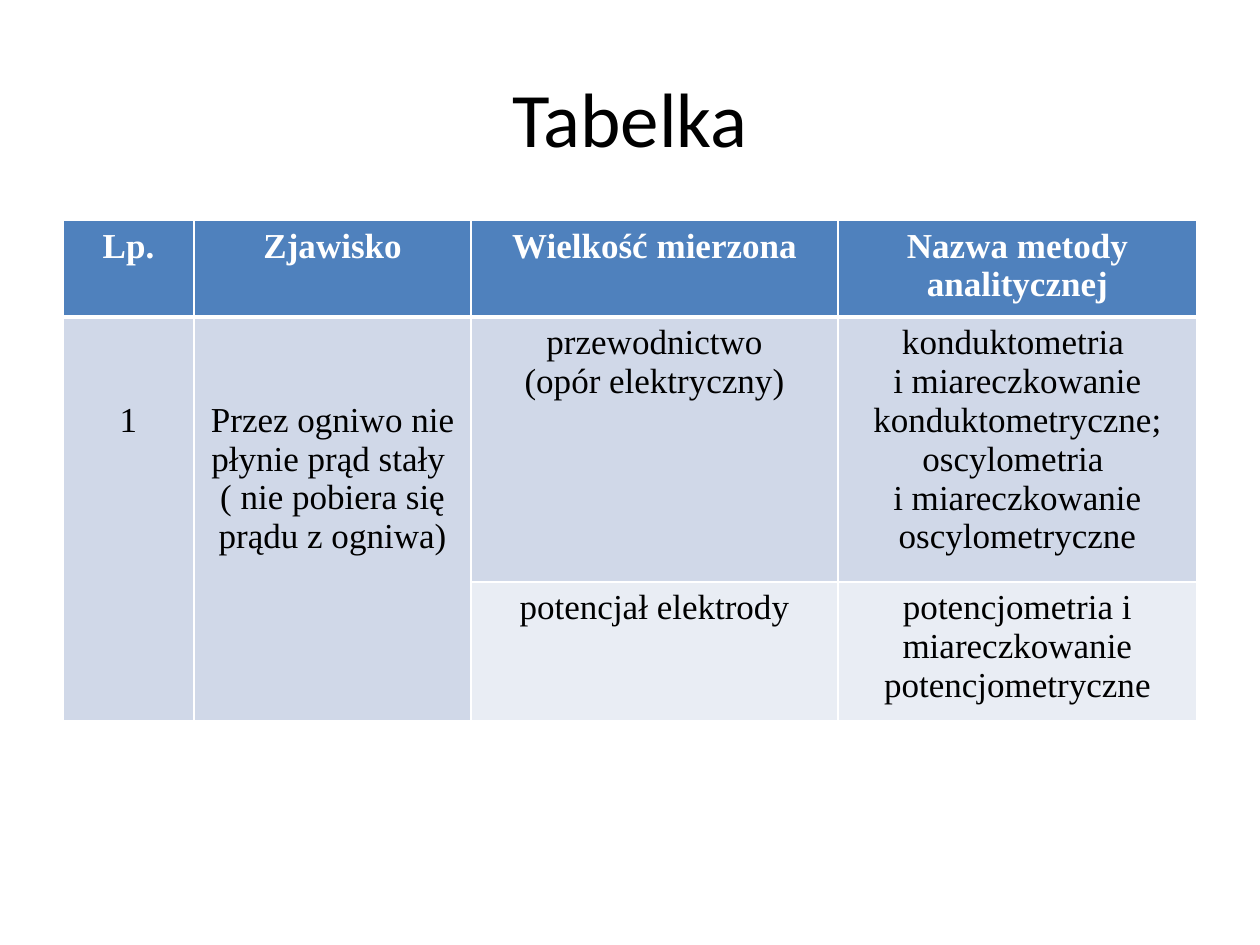
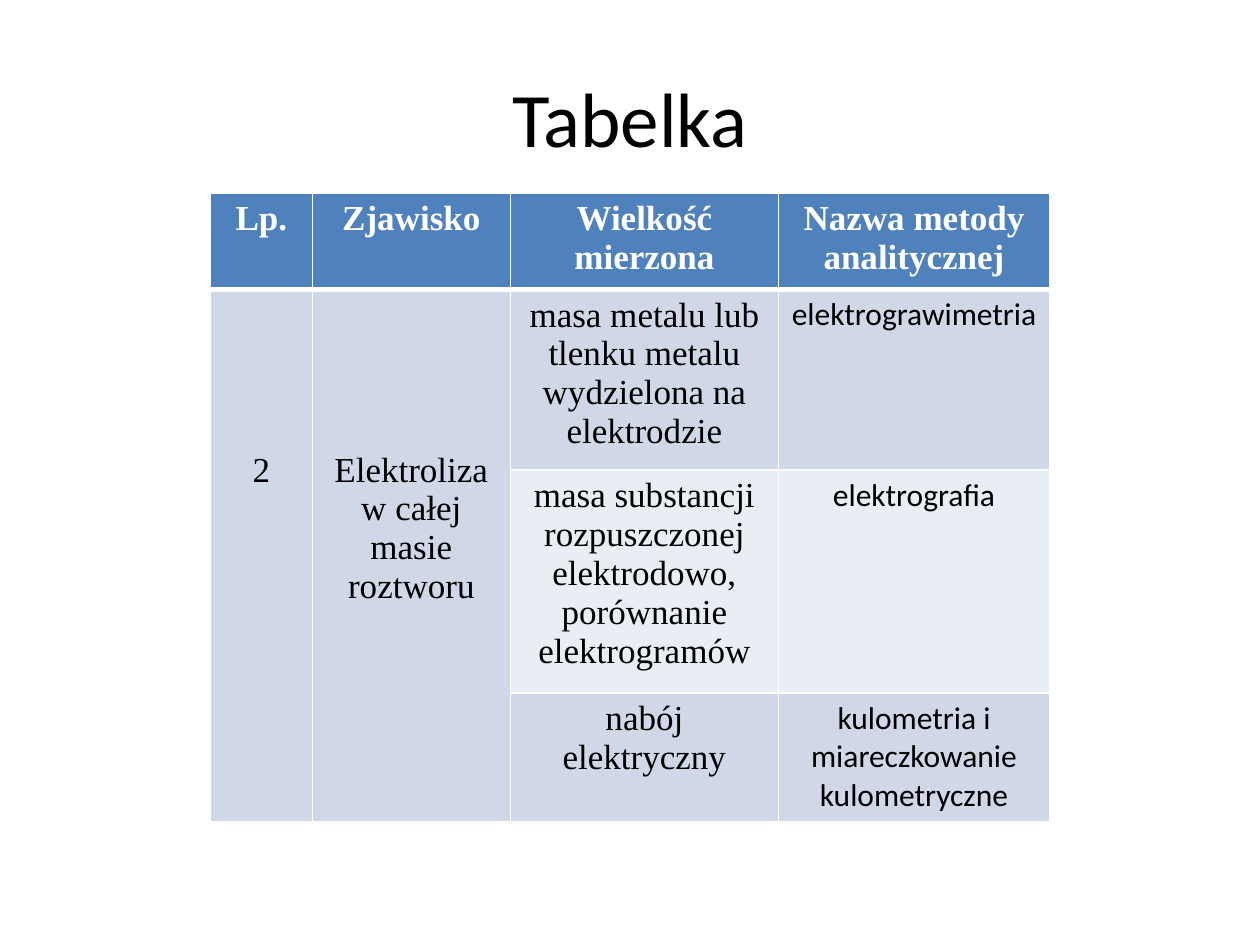
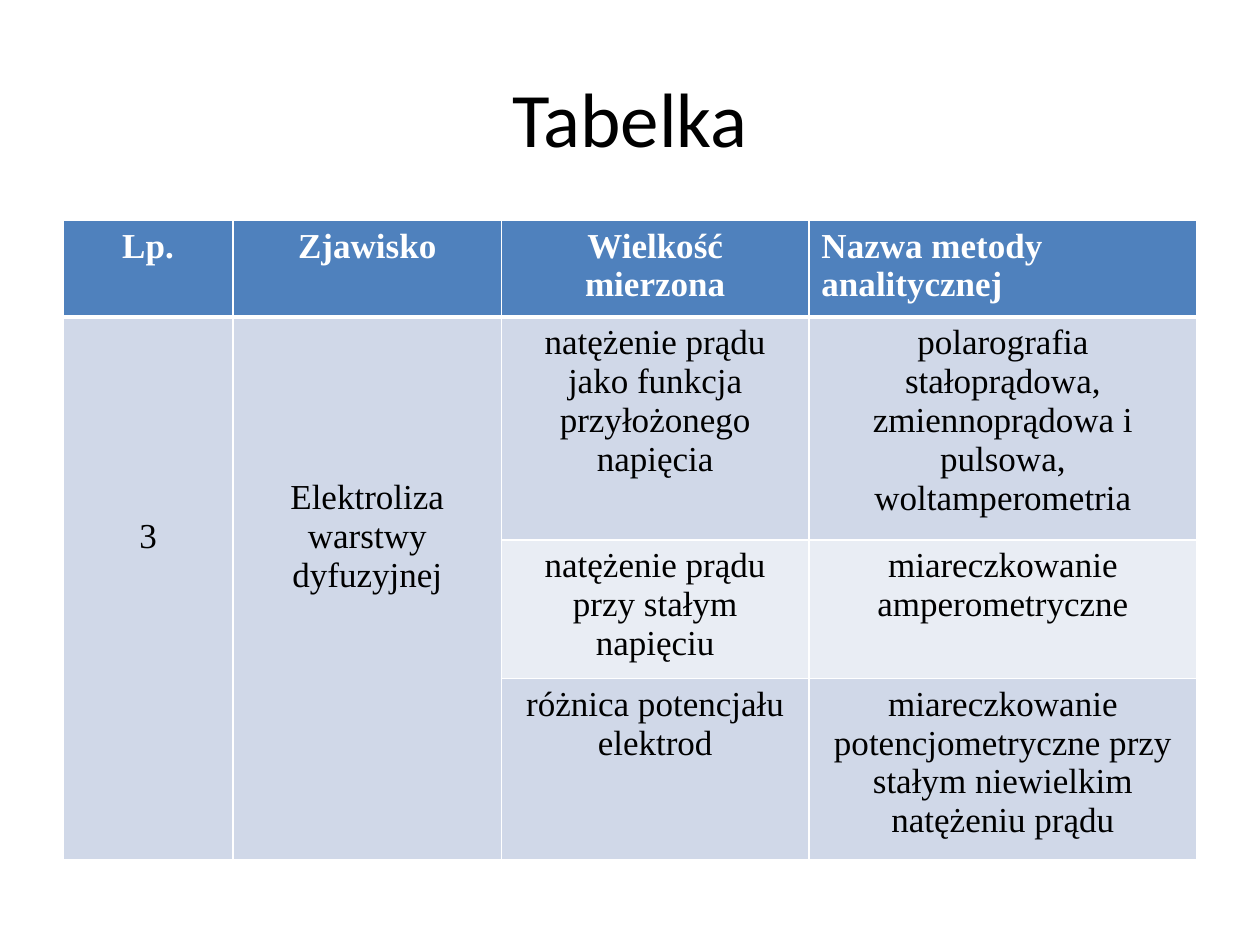
from collections import namedtuple

from lxml.etree import SubElement
from pptx import Presentation
from pptx.dml.color import RGBColor
from pptx.enum.text import MSO_ANCHOR as Anchor, PP_ALIGN as Align
from pptx.oxml.ns import qn
from pptx.util import Emu, Inches, Pt

BLACK = RGBColor(0x00, 0x00, 0x00)
WHITE = RGBColor(0xFF, 0xFF, 0xFF)
HEADER_BLUE = RGBColor(0x4F, 0x81, 0xBD)
BANDS = (RGBColor(0xD0, 0xD8, 0xE8), RGBColor(0xE9, 0xED, 0xF4))

HEADING_FONT = "Calibri"
TABLE_FONT = "Times New Roman"
SLIDE_WIDTH, SLIDE_HEIGHT = Inches(10), Inches(7.5)
TEXT_LINE = Pt(22.14)  # height of one 20 pt line in a table
CELL_PAD = Inches(0.05)
THIN, THICK = 1, 3

Box = namedtuple("Box", "left top width")
Entry = namedtuple("Entry", "text skipped_lines")
Method = namedtuple("Method", "lines quantity name")

TITLE_BOX = Box(0.05, 0.04, 0.9)
TITLE_HEIGHT = 1 / 6
WIDE_BOX = Box(0.05, 0.2333, 0.9)
NARROW_BOX = Box(0.167, 0.204, 0.666)
HEADERS = ("Lp.", "Zjawisko", "Wielkość mierzona", "Nazwa metody analitycznej")
HEADER_LINES = 2

TABLES = (
    dict(
        box=WIDE_BOX,
        column_weights=(1.04, 2.2, 2.91, 2.85),
        number=Entry("1", 2),
        phenomenon=Entry("Przez ogniwo nie płynie prąd stały \n"
                         "( nie pobiera się prądu z ogniwa)", 2),
        methods=(
            Method(6, "przewodnictwo\n(opór elektryczny)",
                   "konduktometria \n"
                   "i miareczkowanie konduktometryczne; oscylometria \n"
                   "i miareczkowanie oscylometryczne"),
            Method(3, "potencjał elektrody",
                   "potencjometria i miareczkowanie potencjometryczne"),
        ),
    ),
    dict(
        box=NARROW_BOX,
        column_weights=(0.81, 1.57, 2.13, 2.15),
        number=Entry("2", 4),
        phenomenon=Entry("Elektroliza w całej masie roztworu", 4),
        methods=(
            Method(4, "masa metalu lub tlenku metalu wydzielona na elektrodzie",
                   "elektrograwimetria"),
            Method(5, "masa substancji rozpuszczonej elektrodowo, "
                      "porównanie elektrogramów", "elektrografia"),
            Method(3, "nabój elektryczny",
                   "kulometria i miareczkowanie kulometryczne"),
        ),
        name_format=dict(font=HEADING_FONT, size=18),
    ),
    dict(
        box=WIDE_BOX,
        column_weights=(1.35, 2.13, 2.44, 3.08),
        number=Entry("3", 5),
        phenomenon=Entry("Elektroliza warstwy dyfuzyjnej", 4),
        methods=(
            Method(5, "natężenie prądu jako funkcja przyłożonego napięcia",
                   "polarografia stałoprądowa, zmiennoprądowa i pulsowa, "
                   "woltamperometria"),
            Method(3, "natężenie prądu przy stałym napięciu",
                   "miareczkowanie amperometryczne"),
            Method(4, "różnica potencjału elektrod",
                   "miareczkowanie potencjometryczne przy stałym "
                   "niewielkim natężeniu prądu"),
        ),
        last_header_align=Align.LEFT,
    ),
)


def write(frame, text, font=TABLE_FONT, size=20, color=BLACK, bold=False,
          align=Align.CENTER):
    """Fill a text frame, one paragraph for each line of text."""
    frame.word_wrap = True
    for index, line in enumerate(text.split("\n")):
        para = frame.add_paragraph() if index else frame.paragraphs[0]
        para.alignment = align
        span = para.add_run()
        span.text = line
        span.font.name = font
        span.font.size = Pt(size)
        span.font.bold = bold
        span.font.color.rgb = color


def style_cell(cell, fill, top=THIN, bottom=THIN):
    """Set white borders (widths in points), then the fill."""
    properties = cell._tc.get_or_add_tcPr()
    for side, width in (("L", THIN), ("R", THIN), ("T", top), ("B", bottom)):
        line = SubElement(properties, qn(f"a:ln{side}"), w=str(Pt(width)))
        solid = SubElement(line, qn("a:solidFill"))
        SubElement(solid, qn("a:srgbClr"), val=str(WHITE))
    cell.fill.solid()
    cell.fill.fore_color.rgb = fill


def place(box):
    return (Emu(int(box.left * SLIDE_WIDTH)), Emu(int(box.top * SLIDE_HEIGHT)),
            Emu(int(box.width * SLIDE_WIDTH)))


def add_title(page, text):
    title = page.shapes.add_textbox(*place(TITLE_BOX),
                                    int(TITLE_HEIGHT * SLIDE_HEIGHT))
    title.text_frame.vertical_anchor = Anchor.MIDDLE
    write(title.text_frame, text, font=HEADING_FONT, size=44)


def add_grid(page, box, column_weights, line_counts):
    """Add a bare table whose rows hold the given numbers of text lines."""
    heights = [int(count * TEXT_LINE + 2 * CELL_PAD) for count in line_counts]
    left, top, width = place(box)
    table = page.shapes.add_table(len(heights), len(column_weights),
                                  left, top, width, sum(heights)).table
    table.horz_banding = False
    for column, weight in zip(table.columns, column_weights):
        column.width = int(width * weight / sum(column_weights))
    for row, height in zip(table.rows, heights):
        row.height = height
    return table


def add_methods_table(page, box, column_weights, number, phenomenon, methods,
                      name_format=None, last_header_align=Align.CENTER):
    line_counts = [HEADER_LINES] + [method.lines for method in methods]
    table = add_grid(page, box, column_weights, line_counts)

    for column, header in enumerate(HEADERS):
        cell = table.cell(0, column)
        style_cell(cell, HEADER_BLUE, bottom=THICK)
        is_last = column == len(HEADERS) - 1
        write(cell.text_frame, header, color=WHITE, bold=True,
              align=last_header_align if is_last else Align.CENTER)

    for row, method in enumerate(methods, start=1):
        band = BANDS[(row - 1) % 2]
        for column in range(len(HEADERS)):
            style_cell(table.cell(row, column),
                       BANDS[0] if column < 2 else band,
                       top=THICK if row == 1 else THIN)
        write(table.cell(row, 2).text_frame, method.quantity)
        write(table.cell(row, 3).text_frame, method.name, **(name_format or {}))

    for column, entry in enumerate((number, phenomenon)):
        cell = table.cell(1, column)
        cell.merge(table.cell(len(methods), column))
        cell.margin_top = int(CELL_PAD + entry.skipped_lines * TEXT_LINE)
        write(cell.text_frame, entry.text)


def main():
    deck = Presentation()
    deck.slide_width, deck.slide_height = SLIDE_WIDTH, SLIDE_HEIGHT
    for content in TABLES:
        page = deck.slides.add_slide(deck.slide_layouts[6])
        add_title(page, "Tabelka")
        add_methods_table(page, **content)
    deck.save("out.pptx")


if __name__ == "__main__":
    main()
